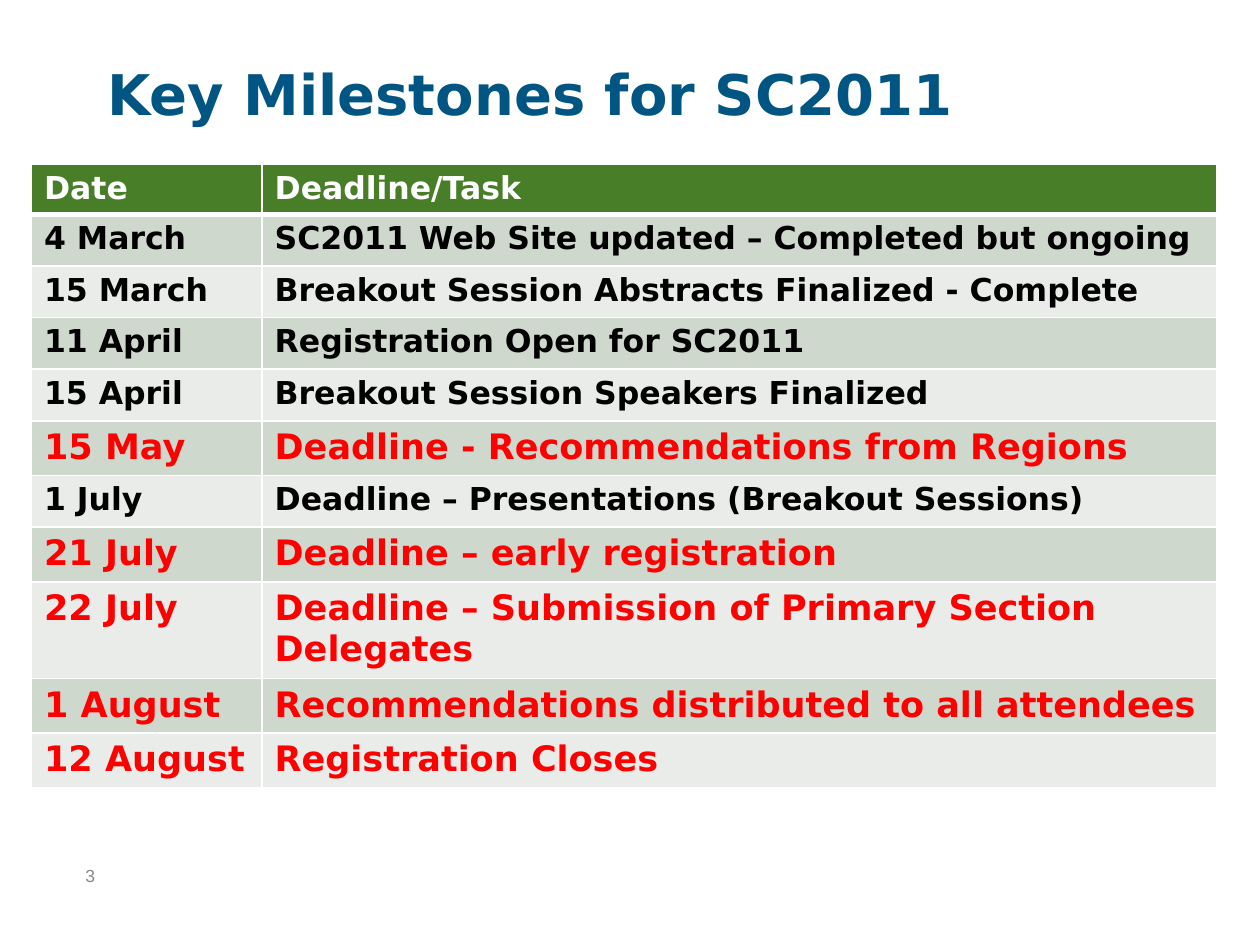
from typing import NamedTuple

from lxml.etree import SubElement
from pptx import Presentation
from pptx.dml.color import RGBColor
from pptx.enum.text import MSO_ANCHOR, PP_ALIGN
from pptx.oxml import parse_xml
from pptx.oxml.ns import nsdecls, qn
from pptx.util import Inches, Pt

FONT = "DejaVu Sans"
WHITE, BLACK, RED = "FFFFFF", "000000", "FF0000"
HEADER_FILL, BAND_FILLS = "477E27", ("CFD8CD", "E9ECE8")
COLUMN_WIDTHS = (1.83, 7.58)
HEADER_HEIGHT, ROW_HEIGHT = 0.27, 0.41


class Milestone(NamedTuple):
    date: str
    task: str
    urgent: bool = False


MILESTONES = [
    Milestone("4 March", "SC2011 Web Site updated – Completed but ongoing"),
    Milestone("15 March", "Breakout Session Abstracts Finalized - Complete"),
    Milestone("11 April", "Registration Open for SC2011"),
    Milestone("15 April", "Breakout Session Speakers Finalized"),
    Milestone("15 May", "Deadline - Recommendations from Regions", True),
    Milestone("1 July", "Deadline – Presentations (Breakout Sessions)"),
    Milestone("21 July", "Deadline – early registration", True),
    Milestone("22 July", "Deadline – Submission of Primary Section Delegates", True),
    Milestone("1 August", "Recommendations distributed to all attendees", True),
    Milestone("12 August", "Registration Closes", True),
]


def rgb(color: str) -> RGBColor:
    return RGBColor.from_string(color)


def write(text_frame, text: str, size: int, color: str,
          font: str = FONT, bold: bool = True) -> None:
    text_frame.text = text
    paragraph = text_frame.paragraphs[0]
    paragraph.alignment = PP_ALIGN.LEFT
    paragraph.font.name = font
    paragraph.font.size = Pt(size)
    paragraph.font.bold = bold
    paragraph.font.color.rgb = rgb(color)


def set_borders(cell, top: int = 1, bottom: int = 1) -> None:
    properties = cell._tc.get_or_add_tcPr()
    widths = {"lnL": 1, "lnR": 1, "lnT": top, "lnB": bottom}
    for index, (tag, width) in enumerate(widths.items()):
        line = parse_xml(f'<a:{tag} {nsdecls("a")} w="{Pt(width)}"/>')
        fill = SubElement(line, qn("a:solidFill"))
        SubElement(fill, qn("a:srgbClr"), val=WHITE)
        properties.insert(index, line)


def fill_row(table, index: int, texts: tuple[str, str], size: int,
             color: str, fill: str) -> None:
    for column, text in enumerate(texts):
        cell = table.cell(index, column)
        write(cell.text_frame, text, size, color)
        cell.fill.solid()
        cell.fill.fore_color.rgb = rgb(fill)
        set_borders(cell, top=3 if index == 1 else 1, bottom=3 if index == 0 else 1)


def add_milestone_table(slide) -> None:
    height = HEADER_HEIGHT + ROW_HEIGHT * len(MILESTONES)
    table = slide.shapes.add_table(
        len(MILESTONES) + 1, len(COLUMN_WIDTHS), Inches(0.25), Inches(1.3),
        Inches(sum(COLUMN_WIDTHS)), Inches(height)).table
    for column, width in zip(table.columns, COLUMN_WIDTHS):
        column.width = Inches(width)
    for index, row in enumerate(table.rows):
        row.height = Inches(ROW_HEIGHT if index else HEADER_HEIGHT)
    fill_row(table, 0, ("Date", "Deadline/Task"), 18, WHITE, HEADER_FILL)
    for index, milestone in enumerate(MILESTONES, start=1):
        size, color = (20, RED) if milestone.urgent else (18, BLACK)
        fill_row(table, index, (milestone.date, milestone.task), size, color,
                 BAND_FILLS[(index - 1) % 2])


def main() -> None:
    presentation = Presentation()
    presentation.slide_width = Inches(10)
    presentation.slide_height = Inches(7.5)
    slide = presentation.slides.add_slide(presentation.slide_layouts[5])

    title = slide.shapes.title
    title.left, title.top = Inches(0.75), Inches(0.42)
    title.width, title.height = Inches(8.5), Inches(1.25)
    title.text_frame.vertical_anchor = MSO_ANCHOR.TOP
    write(title.text_frame, "Key Milestones for SC2011", 32, "005582")

    number = slide.shapes.add_textbox(Inches(0.58), Inches(6.75), Inches(0.75), Inches(0.4))
    number.text_frame.word_wrap = True
    number.text_frame.vertical_anchor = MSO_ANCHOR.MIDDLE
    write(number.text_frame, "3", 10, "898989", font="Arial", bold=False)

    add_milestone_table(slide)
    presentation.save("out.pptx")


if __name__ == "__main__":
    main()
